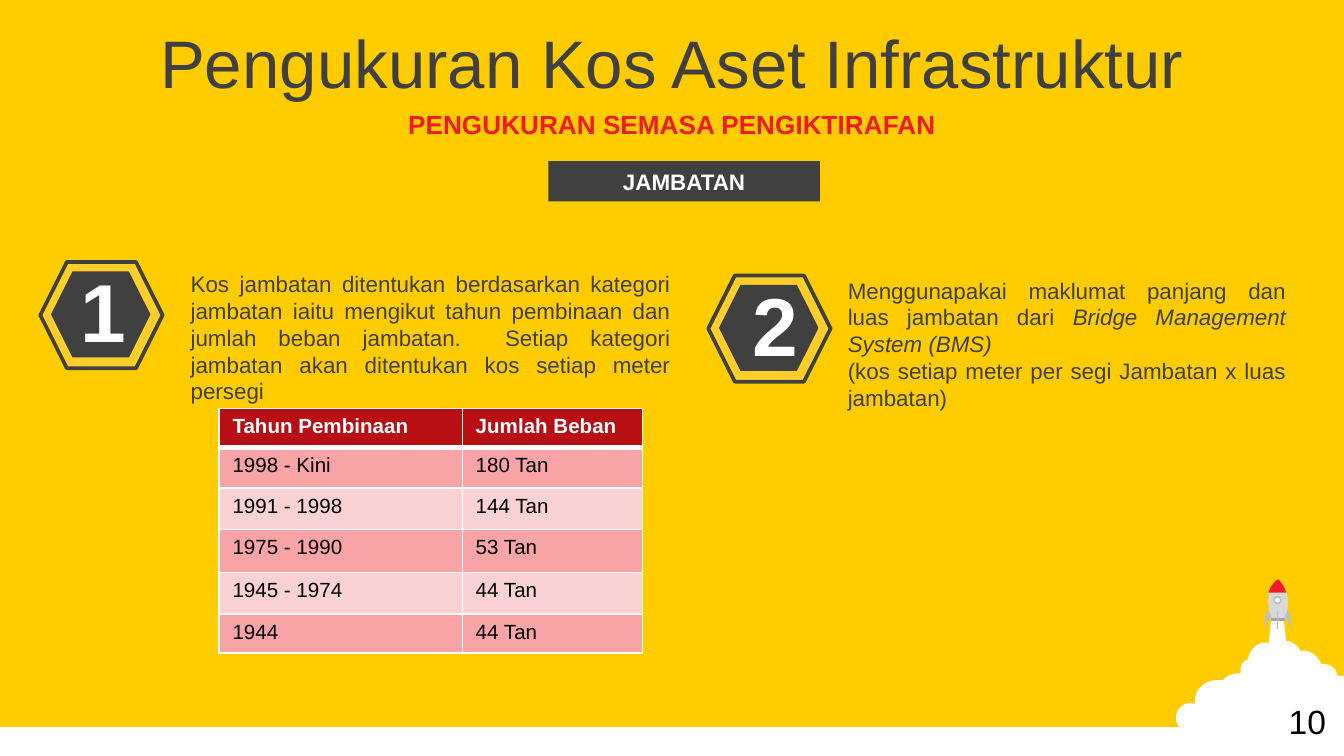
from lxml.etree import SubElement
from pptx import Presentation
from pptx.dml.color import RGBColor
from pptx.enum.shapes import MSO_SHAPE
from pptx.enum.text import MSO_ANCHOR, MSO_AUTO_SIZE, PP_ALIGN
from pptx.oxml.ns import qn
from pptx.util import Pt

PX = 9144  # 100 px to the inch
DARK, WHITE, RED, SILVER = "404040", "FFFFFF", "ED1C24", "BFBFBF"

color = RGBColor.from_string

prs = Presentation()
prs.slide_width = 1000 * PX
prs.slide_height = prs.slide_width * 9 // 16
slide = prs.slides.add_slide(prs.slide_layouts[5])
slide.background.fill.solid()
slide.background.fill.fore_color.rgb = color("FFCC00")
shapes = slide.shapes


def paint(shape, fill, line=None, width=1):
    shape.shadow.inherit = False
    shape.fill.solid()
    shape.fill.fore_color.rgb = color(fill)
    if line:
        shape.line.color.rgb = color(line)
        shape.line.width = Pt(width)
    else:
        shape.line.fill.background()


def write(holder, paragraphs, size, ink, align, bold=False):
    """Each paragraph is a list of (words, italic) runs."""
    frame = holder.text_frame
    for i, runs in enumerate(paragraphs):
        paragraph = frame.paragraphs[0] if i == 0 else frame.add_paragraph()
        paragraph.alignment = align
        font = paragraph.font
        font.name, font.size, font.bold = "Arial", Pt(size), bold
        font.color.rgb = color(ink)
        for words, italic in runs:
            run = paragraph.add_run()
            run.text = words
            if italic:
                run.font.italic = True


# White ground strip
ground = shapes.add_shape(MSO_SHAPE.RECTANGLE, 0, 541 * PX, 1000 * PX, 24 * PX)
paint(ground, WHITE)

# Smoke cloud and rocket: two numbers are a line, six a cubic curve
smoke = [(946, 459), (955, 459), (957, 477), (959, 477),
         (962, 478, 965, 480, 967, 483), (968, 485), (969, 484),
         (975, 484, 981, 488, 983, 494), (984, 494),
         (990, 494, 994, 497, 995, 502), (995, 503), (1000, 503),
         (1000, 560), (934, 561), (923, 561, 917, 556, 913, 551),
         (904, 553), (900, 552, 894, 550, 893, 545), (892, 544),
         (891, 545, 889, 545, 886, 545), (880, 545, 875, 540, 875, 534),
         (875, 528, 880, 523, 886, 523), (889, 524), (889, 522),
         (889, 513, 896, 506, 906, 506), (910, 506), (911, 505),
         (914, 502, 918, 501, 923, 501), (923, 498),
         (923, 495, 925, 492, 928, 491), (929, 489),
         (930, 483, 936, 478, 942, 478), (944, 479)]
body = [(946, 462), (944, 453, 940, 440, 951, 431),
        (962, 441, 958, 454, 956, 462)]
base = [(946, 460), (956, 460), (956, 462), (946, 462)]
nose = [(951, 431), (954, 434, 956, 437, 957, 441), (944, 441),
        (945, 437, 947, 434, 951, 431)]
left_fin = [(944, 454), (946, 459), (942, 461, 943, 466, 942, 468),
            (941, 465, 940, 457, 944, 454)]
right_fin = [(958, 454), (956, 459), (959, 461, 959, 466, 960, 468),
             (960, 465, 962, 457, 958, 454)]
STEPS = 8
for outline, fill in [(smoke, WHITE), (body, "D9D9D9"), (base, "A6A6A6"),
                      (nose, RED), (left_fin, SILVER), (right_fin, SILVER)]:
    points = [outline[0]]
    for segment in outline[1:]:
        if len(segment) == 2:
            points.append(segment)
            continue
        controls = [points[-1], segment[:2], segment[2:4], segment[4:]]
        for step in range(1, STEPS + 1):
            t = step / STEPS
            weights = ((1 - t) ** 3, 3 * t * (1 - t) ** 2,
                       3 * t * t * (1 - t), t ** 3)
            points.append(tuple(sum(w * c[axis] for w, c in zip(weights, controls))
                                for axis in (0, 1)))
    emu_points = [(round(x * PX), round(y * PX)) for x, y in points]
    builder = shapes.build_freeform(*emu_points[0], scale=1.0)
    builder.add_line_segments(emu_points[1:], close=True)
    paint(builder.convert_to_shape(), fill)

porthole = shapes.add_shape(MSO_SHAPE.OVAL, 948 * PX, 444 * PX, 5 * PX, 5 * PX)
paint(porthole, WHITE, SILVER)
middle_fin = shapes.add_shape(MSO_SHAPE.RECTANGLE, 950 * PX, 455 * PX, PX, 13 * PX)
paint(middle_fin, SILVER)

# Title and subtitle
title = shapes.title
subtitle = shapes.add_textbox(0, 77 * PX, 1000 * PX, 31 * PX)
title.left, title.top, title.width, title.height = 0, 14 * PX, 1000 * PX, 63 * PX
for heading, words, size, ink, bold in [
        (title, "Pengukuran Kos Aset Infrastruktur", 36, DARK, False),
        (subtitle, "PENGUKURAN SEMASA PENGIKTIRAFAN", 14, RED, True)]:
    heading.text_frame.word_wrap = True
    heading.text_frame.auto_size = MSO_AUTO_SIZE.NONE
    heading.text_frame.vertical_anchor = MSO_ANCHOR.MIDDLE
    write(heading, [[(words, False)]], size, ink, PP_ALIGN.CENTER, bold)

# Topic label
topic = shapes.add_shape(MSO_SHAPE.RECTANGLE, 408 * PX, 120 * PX, 202 * PX, 30 * PX)
paint(topic, DARK)
write(topic, [[("JAMBATAN", False)]], 12, WHITE, PP_ALIGN.CENTER, True)

# Numbered hexagons
for number, left, top, number_left, number_top in [("1", 30, 195, 49, 189),
                                                   ("2", 527, 205, 549, 199)]:
    rim = shapes.add_shape(MSO_SHAPE.HEXAGON, left * PX, top * PX, 91 * PX, 79 * PX)
    paint(rim, "FFCE29", DARK, 2)
    core = shapes.add_shape(MSO_SHAPE.HEXAGON, (left + 8) * PX, (top + 7) * PX,
                            74 * PX, 64 * PX)
    paint(core, DARK)
    numeral = shapes.add_textbox(number_left * PX, number_top * PX, 55 * PX, 84 * PX)
    numeral.text_frame.word_wrap = False
    write(numeral, [[(number, False)]], 44, WHITE, PP_ALIGN.RIGHT, True)

# Explanations and page number
category = [[("Kos jambatan ditentukan berdasarkan kategori jambatan iaitu mengikut "
              "tahun pembinaan dan jumlah beban jambatan.  Setiap kategori jambatan "
              "akan ditentukan kos setiap meter persegi", False)]]
dimensions = [[("Menggunapakai maklumat panjang dan luas jambatan dari ", False),
               ("Bridge Management System (BMS)", True)],
              [("(kos setiap meter per segi Jambatan x luas jambatan)", False)]]
for paragraphs, left, top, width, height, size, ink, align in [
        (category, 132, 196, 377, 111, 12, DARK, PP_ALIGN.JUSTIFY),
        (dimensions, 621, 201, 346, 111, 12, DARK, PP_ALIGN.JUSTIFY),
        ([[("10", False)]], 949, 517, 60, 40, 18, "000000", PP_ALIGN.LEFT)]:
    note = shapes.add_textbox(left * PX, top * PX, width * PX, height * PX)
    note.text_frame.word_wrap = True
    write(note, paragraphs, size, ink, align)

# Load table
loads = [("Tahun Pembinaan", "Jumlah Beban"), ("1998 - Kini", "180 Tan"),
         ("1991 - 1998", "144 Tan"), ("1975 - 1990", "53 Tan"),
         ("1945 - 1974", "44 Tan"), ("1944", "44 Tan")]
row_heights = [29, 30, 31, 32, 31, 29]
table = shapes.add_table(len(loads), 2, 163 * PX, 304 * PX, 315 * PX,
                         sum(row_heights) * PX).table
for column, width in zip(table.columns, (181, 134)):
    column.width = width * PX
for r, (values, height) in enumerate(zip(loads, row_heights)):
    table.rows[r].height = height * PX
    header = r == 0
    band = "B80F15" if header else ("FBD2D3", "F8A4A7")[r % 2]
    for c, value in enumerate(values):
        cell = table.cell(r, c)
        write(cell, [[(value, False)]], 11, WHITE if header else "000000",
              PP_ALIGN.LEFT, header)
        # Borders go before the fill in the cell properties
        properties = cell._tc.get_or_add_tcPr()
        for side in ("lnL", "lnR", "lnT", "lnB"):
            thick = (r, side) in ((0, "lnB"), (1, "lnT"))
            border = SubElement(properties, qn("a:" + side),
                                w=str(Pt(3 if thick else 1)))
            border_fill = SubElement(border, qn("a:solidFill"))
            SubElement(border_fill, qn("a:srgbClr"), val=WHITE)
        cell.fill.solid()
        cell.fill.fore_color.rgb = color(band)

prs.save("out.pptx")
